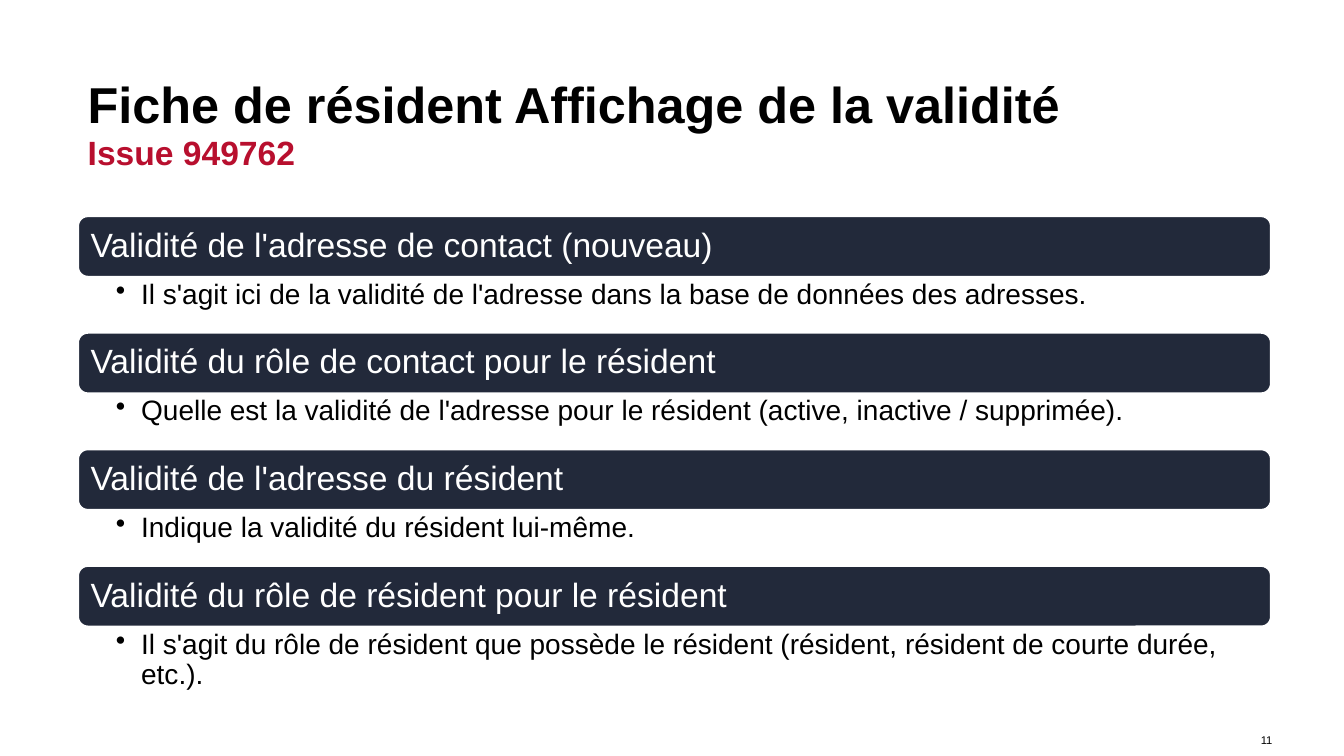
from dataclasses import dataclass

from pptx import Presentation
from pptx.dml.color import RGBColor as Rgb
from pptx.enum.shapes import MSO_SHAPE as Shape
from pptx.enum.text import MSO_ANCHOR as Anchor, MSO_AUTO_SIZE as AutoSize, PP_ALIGN as Align
from pptx.oxml.ns import qn
from pptx.slide import Slide
from pptx.text.text import TextFrame, _Paragraph as Para
from pptx.util import Inches, Pt
from lxml.etree import SubElement


@dataclass(frozen=True)
class Theme:
    font: str = "Arial"
    white: Rgb = Rgb(0xFF, 0xFF, 0xFF)
    black: Rgb = Rgb(0, 0, 0)
    navy: Rgb = Rgb(0x22, 0x29, 0x3A)
    red: Rgb = Rgb(0xB8, 0x0F, 0x2E)
    title: int = 36
    heading: int = 24
    detail: int = 20
    number: int = 8


@dataclass(frozen=True)
class Section:
    heading: str
    detail: str
    detail_height: float = 0.54


THEME = Theme()
LEFT, WIDTH = 0.77, 11.84
FIRST_TOP, LAST_TOP, BAR_HEIGHT = 2.14, 5.61, 0.61
SECTIONS = [
    Section("Validité de l'adresse de contact (nouveau)",
            "Il s'agit ici de la validité de l'adresse dans la base de données des adresses."),
    Section("Validité du rôle de contact pour le résident",
            "Quelle est la validité de l'adresse pour le résident (active, inactive / supprimée)."),
    Section("Validité de l'adresse du résident",
            "Indique la validité du résident lui-même."),
    Section("Validité du rôle de résident pour le résident",
            "Il s'agit du rôle de résident que possède le résident "
            "(résident, résident de courte durée, etc.).", 0.65),
]


def set_bullet(para: Para, symbol: str = "", indent: float = 0) -> None:
    """Give the paragraph a hanging bullet, or none when symbol is empty."""
    properties = para._p.get_or_add_pPr()
    properties.set("marL", str(Inches(indent)))
    properties.set("indent", str(Inches(-indent)))
    if symbol:
        SubElement(properties, qn("a:buChar"), char=symbol)
    else:
        SubElement(properties, qn("a:buNone"))


def write(frame: TextFrame, text: str, size: int, color: Rgb, bold: bool = False,
          anchor: Anchor = Anchor.TOP, align: Align = Align.LEFT,
          bullet: str = "", indent: float = 0) -> None:
    frame.word_wrap = True
    frame.auto_size = AutoSize.NONE
    frame.vertical_anchor = anchor
    frame.text = text
    para = frame.paragraphs[0]
    para.alignment = align
    para.line_spacing = 0.9
    para.space_before = Pt(0)
    set_bullet(para, bullet, indent)
    font = para.font
    font.name, font.size, font.bold = THEME.font, Pt(size), bold
    font.color.rgb = color


def set_margins(frame: TextFrame, left: float, top: float, right: float, bottom: float) -> None:
    frame.margin_left, frame.margin_top = Inches(left), Inches(top)
    frame.margin_right, frame.margin_bottom = Inches(right), Inches(bottom)


def fill_placeholder(page: Slide, index: int, top: float, height: float,
                     text: str, size: int, color: Rgb) -> None:
    box = page.placeholders[index]
    box.left, box.top = Inches(LEFT), Inches(top)
    box.width, box.height = Inches(WIDTH), Inches(height)
    write(box.text_frame, text, size, color, bold=True)


def draw_section(page: Slide, section: Section, top: float) -> None:
    bar = page.shapes.add_shape(Shape.ROUNDED_RECTANGLE, Inches(LEFT), Inches(top),
                                Inches(WIDTH), Inches(BAR_HEIGHT))
    bar.shadow.inherit = False
    bar.fill.solid()
    bar.fill.fore_color.rgb = THEME.navy
    bar.line.color.rgb = THEME.white
    bar.line.width = Pt(2)
    set_margins(bar.text_frame, 0.1, 0.1, 0.1, 0.1)
    write(bar.text_frame, section.heading, THEME.heading, THEME.white, anchor=Anchor.MIDDLE)

    box = page.shapes.add_textbox(Inches(LEFT), Inches(top + BAR_HEIGHT),
                                  Inches(WIDTH), Inches(section.detail_height))
    set_margins(box.text_frame, 0.38, 0.03, 0.16, 0.03)
    write(box.text_frame, section.detail, THEME.detail, THEME.black, bullet="•", indent=0.25)


def main() -> None:
    deck = Presentation()
    deck.slide_width, deck.slide_height = Inches(13.33), Inches(7.5)
    page = deck.slides.add_slide(deck.slide_layouts.get_by_name("Title and Content"))

    fill_placeholder(page, 0, 0.74, 0.55, "Fiche de résident Affichage de la validité",
                     THEME.title, THEME.black)
    fill_placeholder(page, 1, 1.3, 0.43, "Issue 949762", THEME.heading, THEME.red)

    pitch = (LAST_TOP - FIRST_TOP) / (len(SECTIONS) - 1)
    for row, section in enumerate(SECTIONS):
        draw_section(page, section, FIRST_TOP + row * pitch)

    number = page.shapes.add_textbox(Inches(12.4), Inches(7.28), Inches(0.22), Inches(0.13))
    set_margins(number.text_frame, 0, 0, 0, 0)
    write(number.text_frame, "11", THEME.number, THEME.black,
          anchor=Anchor.BOTTOM, align=Align.RIGHT)
    deck.save("out.pptx")


if __name__ == "__main__":
    main()
